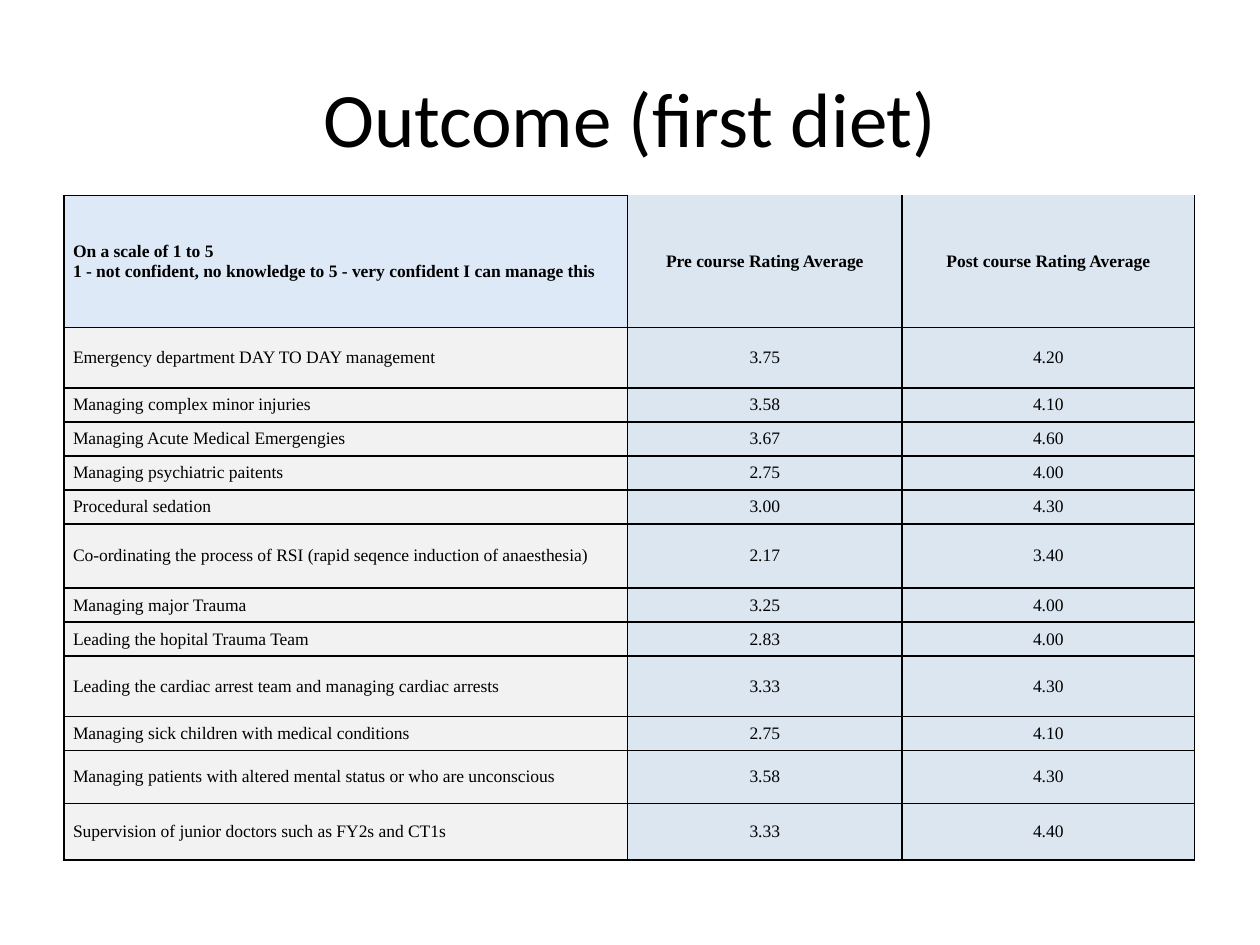
from lxml import etree
from pptx import Presentation
from pptx.dml.color import RGBColor
from pptx.enum.text import MSO_ANCHOR, PP_ALIGN
from pptx.oxml.ns import qn
from pptx.util import Inches, Pt

MIDDLE = MSO_ANCHOR.MIDDLE
LEFT, CENTER = PP_ALIGN.LEFT, PP_ALIGN.CENTER
COLORS = {
    "text": "000000",
    "border": "000000",
    "scale": "DEE9F7",
    "topic": "F2F2F2",
    "rating": "DCE6F1",
}
COLUMN_WIDTHS = [4.47, 2.18, 2.32]
# Row height, then the text of each cell
ROWS = [
    (1.05, "On a scale of 1 to 5\n"
           "1 - not confident, no knowledge to 5 - very confident I can manage this",
     "Pre course Rating Average", "Post course Rating Average"),
    (0.48, "Emergency department DAY TO DAY management", "3.75", "4.20"),
    (0.27, "Managing complex minor injuries", "3.58", "4.10"),
    (0.27, "Managing Acute Medical Emergengies", "3.67", "4.60"),
    (0.27, "Managing psychiatric paitents", "2.75", "4.00"),
    (0.27, "Procedural sedation", "3.00", "4.30"),
    (0.51, "Co-ordinating the process of RSI (rapid seqence induction of anaesthesia)",
     "2.17", "3.40"),
    (0.27, "Managing major Trauma", "3.25", "4.00"),
    (0.27, "Leading the hopital Trauma Team", "2.83", "4.00"),
    (0.48, "Leading the cardiac arrest team and managing cardiac arrests", "3.33", "4.30"),
    (0.27, "Managing sick children with medical conditions", "2.75", "4.10"),
    (0.42, "Managing patients with altered mental status or who are unconscious",
     "3.58", "4.30"),
    (0.45, "Supervision of junior doctors such as FY2s and CT1s", "3.33", "4.40"),
]


def write_lines(text_frame, text, font_name, size, alignment, bold=False):
    """Write each line of the text as a paragraph with one run."""
    for index, line in enumerate(text.split("\n")):
        paragraph = text_frame.add_paragraph() if index else text_frame.paragraphs[0]
        paragraph.alignment = alignment
        run = paragraph.add_run()
        run.text = line
        run.font.name = font_name
        run.font.size = Pt(size)
        run.font.bold = bold
        run.font.color.rgb = RGBColor.from_string(COLORS["text"])


def draw_borders(cell, sides):
    """Line the named sides (L, R, T, B) and leave the others open."""
    properties = cell._tc.get_or_add_tcPr()
    for side in "LRTB":
        line = etree.SubElement(properties, qn("a:ln" + side), w=str(Pt(1)))
        if side in sides:
            fill = etree.SubElement(line, qn("a:solidFill"))
            etree.SubElement(fill, qn("a:srgbClr"), val=COLORS["border"])
        else:
            etree.SubElement(line, qn("a:noFill"))


presentation = Presentation()
presentation.slide_width = Inches(10)
presentation.slide_height = Inches(7.5)
slide = presentation.slides.add_slide(presentation.slide_layouts[6])

title = slide.shapes.add_textbox(Inches(0.5), Inches(0.3), Inches(9), Inches(1.25))
title.text_frame.word_wrap = True
title.text_frame.vertical_anchor = MIDDLE
write_lines(title.text_frame, "Outcome (first diet)", "Calibri", 44, CENTER)

table = slide.shapes.add_table(
    len(ROWS), len(COLUMN_WIDTHS), Inches(0.51), Inches(1.55),
    Inches(sum(COLUMN_WIDTHS)), Inches(sum(row[0] for row in ROWS)),
).table
table.horz_banding = False
for column, width in zip(table.columns, COLUMN_WIDTHS):
    column.width = Inches(width)

for row_index, (height, *texts) in enumerate(ROWS):
    table.rows[row_index].height = Inches(height)
    is_header = row_index == 0
    for column_index, text in enumerate(texts):
        is_rating = column_index > 0
        cell = table.cell(row_index, column_index)
        cell.vertical_anchor = MIDDLE
        cell.margin_left = cell.margin_right = Inches(0.07)
        cell.margin_top = cell.margin_bottom = 0
        # The rating headings are open at the top
        draw_borders(cell, "LRB" if is_header and is_rating else "LRTB")
        fill_name = "rating" if is_rating else "scale" if is_header else "topic"
        cell.fill.solid()
        cell.fill.fore_color.rgb = RGBColor.from_string(COLORS[fill_name])
        write_lines(cell.text_frame, text, "Times New Roman", 10,
                    CENTER if is_rating else LEFT, bold=is_header)

presentation.save("out.pptx")
